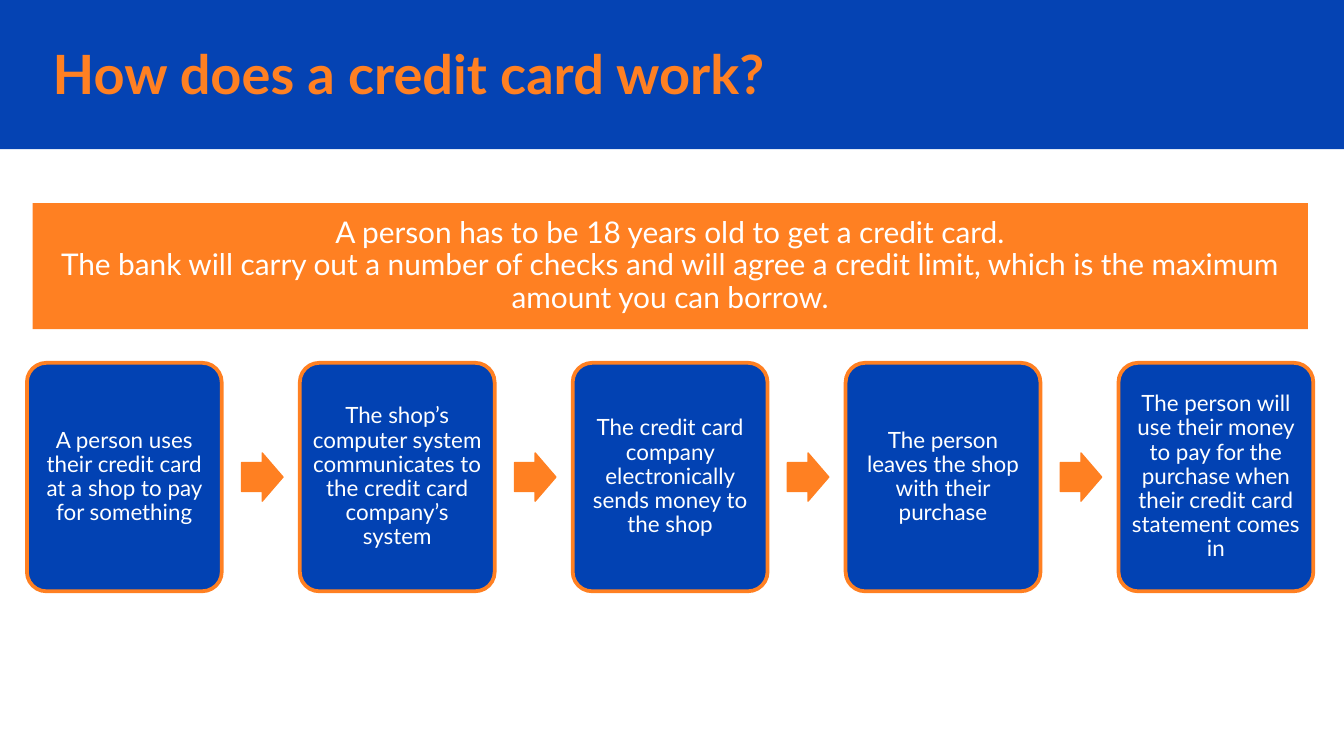
from dataclasses import dataclass

from pptx import Presentation
from pptx.dml.color import RGBColor
from pptx.enum.shapes import MSO_SHAPE
from pptx.enum.text import MSO_ANCHOR, MSO_AUTO_SIZE, PP_ALIGN
from pptx.util import Pt


@dataclass(frozen=True)
class Theme:
    """Colours, font and type sizes of the slide."""
    blue: RGBColor = RGBColor(0x05, 0x43, 0xB3)
    card: RGBColor = RGBColor(0x02, 0x42, 0xB3)
    orange: RGBColor = RGBColor(0xFF, 0x80, 0x22)
    white: RGBColor = RGBColor(0xFF, 0xFF, 0xFF)
    font: str = "Lato"
    title: int = 29
    note: int = 16
    step: int = 12


THEME = Theme()
TITLE = "How does a credit card work?"
NOTE = [
    "A person has to be 18 years old to get a credit card.",
    "The bank will carry out a number of checks and will agree a credit limit, "
    "which is the maximum amount you can borrow.",
]
STEPS = [
    "A person uses their credit card at a shop to pay for something",
    "The shop’s computer system communicates to the credit card company’s system",
    "The credit card company electronically sends money to the shop",
    "The person leaves the shop with their purchase",
    "The person will use their money to pay for the purchase when their credit "
    "card statement comes in",
]


def set_attrs(obj, values):
    """Set every attribute named in a dict of values."""
    for name, value in values.items():
        setattr(obj, name, value)


def write(sp, lines, size, color, inset, align=PP_ALIGN.CENTER, spacing=0.9, bold=False):
    """Fill a shape with formatted paragraphs, centred vertically."""
    tf = sp.text_frame
    set_attrs(tf, {
        "word_wrap": True,
        "auto_size": MSO_AUTO_SIZE.NONE,
        "vertical_anchor": MSO_ANCHOR.MIDDLE,
        **{f"margin_{side}": Pt(inset) for side in ("left", "top", "right", "bottom")},
    })
    for i, line in enumerate(lines):
        p = tf.paragraphs[0] if i == 0 else tf.add_paragraph()
        set_attrs(p, {"alignment": align, "line_spacing": spacing})
        r = p.add_run()
        r.text = line
        set_attrs(r.font, {"name": THEME.font, "size": Pt(size), "bold": bold})
        r.font.color.rgb = color


def add_block(s, kind, box, fill, line_width=0, adjustments=()):
    """Add a flat preset shape, outlined in orange if a line width is given."""
    sp = s.shapes.add_shape(kind, *map(Pt, box))
    sp.shadow.inherit = False
    sp.fill.solid()
    sp.fill.fore_color.rgb = fill
    if line_width:
        sp.line.color.rgb = THEME.orange
        sp.line.width = Pt(line_width)
    else:
        sp.line.fill.background()
    for i, value in enumerate(adjustments):
        sp.adjustments[i] = value
    return sp


def add_title(s):
    """Place the title over its full-width banner."""
    banner = add_block(s, MSO_SHAPE.RECTANGLE, (0, 0, 720, 80), THEME.blue)
    sp = s.shapes.title
    sp.element.addprevious(banner.element)
    set_attrs(sp, {"left": Pt(21), "top": Pt(19), "width": Pt(609), "height": Pt(40.5)})
    write(sp, [TITLE], THEME.title, THEME.orange, 7.2, PP_ALIGN.LEFT, 1.0, True)


def add_steps(s):
    """Lay out the step cards at an equal pitch, with arrows between them."""
    left, pitch = 14.4, 146.2
    for i, step in enumerate(STEPS):
        x = left + i * pitch
        card = add_block(s, MSO_SHAPE.ROUNDED_RECTANGLE, (x, 194.4, 104.4, 122.4),
                         THEME.card, 2, (0.1,))
        write(card, [step], THEME.step, THEME.white, 3.6)
        if i < len(STEPS) - 1:
            add_block(s, MSO_SHAPE.RIGHT_ARROW, (x + 115, 242.7, 22.2, 25.8),
                      THEME.orange, 0.75, (0.6, 0.5))


def add_note(s):
    """Add the orange note above the steps."""
    sp = add_block(s, MSO_SHAPE.RECTANGLE, (17.5, 108.8, 683.2, 67.6), THEME.orange)
    write(sp, NOTE, THEME.note, THEME.white, 3.6)


def main():
    """Build and save the slide."""
    prs = Presentation()
    set_attrs(prs, {"slide_width": Pt(720), "slide_height": Pt(405)})
    s = prs.slides.add_slide(prs.slide_layouts[5])
    add_title(s)
    add_steps(s)
    add_note(s)
    prs.save("out.pptx")


if __name__ == "__main__":
    main()
